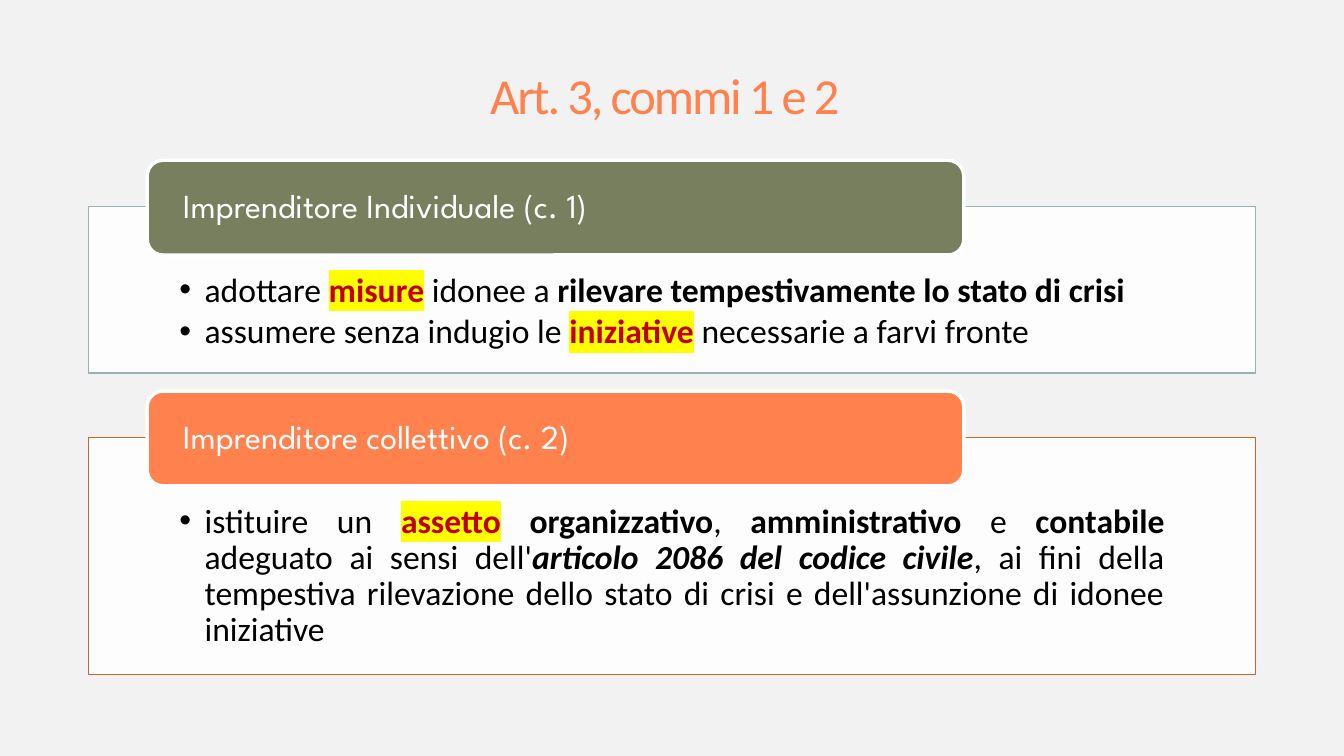
"""Build the slide on the duties of individual and collective entrepreneurs."""
from lxml import etree
from pptx import Presentation, util as u
from pptx.dml.color import RGBColor
from pptx.enum import shapes, text
from pptx.oxml import ns

CENTER, JUSTIFY, LEFT = text.PP_ALIGN.CENTER, text.PP_ALIGN.JUSTIFY, text.PP_ALIGN.LEFT

SECTIONS = [
    {
        "heading": "Imprenditore Individuale (c. 1)",
        "top": 2.05, "height": 1.65, "fill": "777F5E", "border": "9BAFB5", "align": LEFT,
        "bullets": [
            [("adottare ", ""), ("misure", "key"), (" idonee a ", ""),
             ("rilevare tempestivamente lo stato di crisi", "bold")],
            [("assumere senza indugio le ", ""), ("iniziative", "key"),
             (" necessarie a farvi fronte", "")],
        ],
    },
    {
        "heading": "Imprenditore collettivo (c. 2)",
        "top": 4.34, "height": 2.35, "fill": "FF814D", "border": "C96731", "align": JUSTIFY,
        "bullets": [
            [("istituire un ", ""), ("assetto", "key"), (" ", ""), ("organizzativo", "bold"),
             (", ", ""), ("amministrativo", "bold"), (" e ", ""), ("contabile", "bold"),
             (" adeguato ai sensi dell'", ""),
             ("articolo 2086 del codice civile", "bold italic"),
             (", ai fini della tempestiva rilevazione dello stato di crisi "
              "e dell'assunzione di idonee iniziative", "")],
        ],
    },
]


def color(value):
    return RGBColor.from_string(value)


class SlideBuilder:
    body_font = "Calibri"
    heading_font = "League Spartan"
    body_size = 24
    accent = "FF814D"

    def __init__(self, presentation):
        self.slide = presentation.slides.add_slide(presentation.slide_layouts[5])
        background = self.slide.background.fill
        background.solid()
        background.fore_color.rgb = color("F2F2F2")

    def format_run(self, run, font, size, value):
        run.font.name = font
        run.font.size = u.Pt(size)
        run.font.color.rgb = color(value)

    def set_frame(self, shape, anchor, *margins):
        frame = shape.text_frame
        frame.word_wrap = True
        frame.auto_size = text.MSO_AUTO_SIZE.NONE
        frame.vertical_anchor = anchor
        (frame.margin_left, frame.margin_top,
         frame.margin_right, frame.margin_bottom) = map(u.Inches, margins)
        return frame

    def add_title(self, wording):
        title = self.slide.shapes.title
        title.left, title.top = u.Inches(1.85), u.Inches(0.42)
        title.width, title.height = u.Inches(9.49), u.Inches(1.04)
        frame = self.set_frame(title, text.MSO_ANCHOR.MIDDLE, 0.25, 0.25, 0.25, 0.25)
        frame.text = wording
        paragraph = frame.paragraphs[0]
        paragraph.alignment = CENTER
        run = paragraph.runs[0]
        self.format_run(run, self.body_font, 36, self.accent)
        run.font._element.set("spc", "-150")

    def add_block(self, kind, box, fill, border, width):
        shape = self.slide.shapes.add_shape(kind, *map(u.Inches, box))
        shape.shadow.inherit = False
        shape.fill.solid()
        shape.fill.fore_color.rgb = color(fill)
        shape.line.color.rgb = color(border)
        shape.line.width = u.Pt(width)
        return shape

    def add_bullet(self, paragraph, pieces, align):
        properties = paragraph._p.get_or_add_pPr()
        properties.set("marL", str(u.Inches(0.25)))
        properties.set("indent", str(-u.Inches(0.25)))
        etree.SubElement(properties, ns.qn("a:buFont")).set("typeface", "Arial")
        etree.SubElement(properties, ns.qn("a:buChar")).set("char", "•")
        paragraph.alignment = align
        paragraph.line_spacing = 0.9
        paragraph.space_after = u.Pt(3.6)
        for wording, style in pieces:
            run = paragraph.add_run()
            run.text = wording
            is_key = style == "key"
            self.format_run(run, self.body_font, self.body_size, "C00000" if is_key else "000000")
            run.font.bold = bool(style)
            run.font.italic = "italic" in style
            if is_key:
                self.highlight(run)

    def highlight(self, run):
        marker = etree.Element(ns.qn("a:highlight"))
        etree.SubElement(marker, ns.qn("a:srgbClr")).set("val", "FFFF00")
        run.font._element.find(ns.qn("a:solidFill")).addnext(marker)

    def add_panel(self, section):
        box = (0.88, section["top"], 11.57, section["height"])
        panel = self.add_block(shapes.MSO_SHAPE.RECTANGLE, box, "FFFFFF", section["border"], 1)
        fill_color = panel._element.spPr.find(ns.qn("a:solidFill"))[0]
        etree.SubElement(fill_color, ns.qn("a:alpha")).set("val", "90000")
        frame = self.set_frame(panel, text.MSO_ANCHOR.TOP, 0.9, 0.66, 0.9, 0.19)
        for index, pieces in enumerate(section["bullets"]):
            paragraph = frame.add_paragraph() if index else frame.paragraphs[0]
            self.add_bullet(paragraph, pieces, section["align"])

    def add_heading(self, section):
        box = (1.46, section["top"] - 0.46, 8.1, 0.94)
        tab = self.add_block(shapes.MSO_SHAPE.ROUNDED_RECTANGLE, box, section["fill"], "FFFFFF", 2.5)
        frame = self.set_frame(tab, text.MSO_ANCHOR.MIDDLE, 0.31, 0, 0.31, 0)
        frame.text = section["heading"]
        paragraph = frame.paragraphs[0]
        paragraph.alignment = LEFT
        paragraph.line_spacing = 0.9
        self.format_run(paragraph.runs[0], self.heading_font, self.body_size, "FFFFFF")


def main():
    presentation = Presentation()
    presentation.slide_width = u.Inches(13.33)
    presentation.slide_height = u.Inches(7.5)
    builder = SlideBuilder(presentation)
    builder.add_title("Art. 3, commi 1 e 2")
    for section in SECTIONS:
        builder.add_panel(section)
        builder.add_heading(section)
    presentation.save("out.pptx")


if __name__ == "__main__":
    main()
